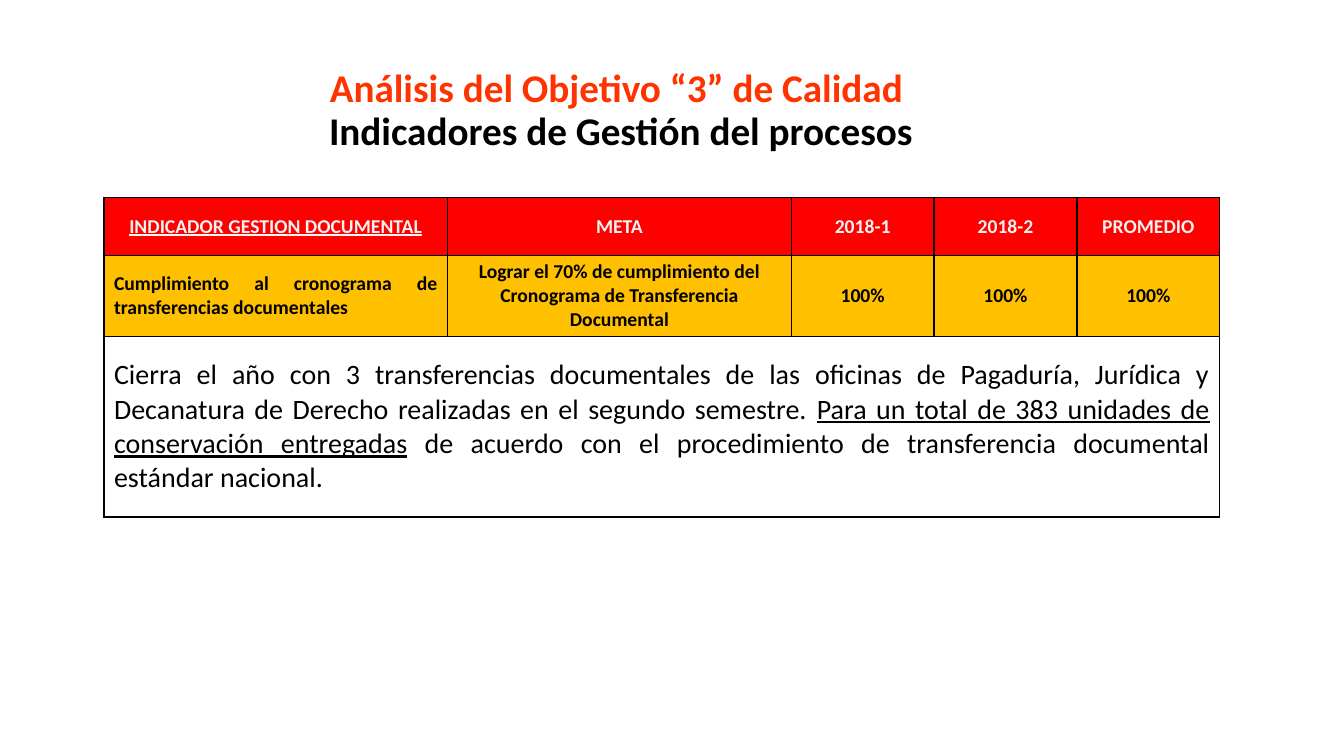
import pptx
import pptx.dml.color
import pptx.enum.text
import pptx.oxml
import pptx.oxml.ns
import pptx.util

Cm = pptx.util.Cm
Pt = pptx.util.Pt
ALIGN = pptx.enum.text.PP_ALIGN
ANCHOR = pptx.enum.text.MSO_ANCHOR

FONT = "Calibri"
COLORS = {
    "title": "FF3300",
    "text": "000000",
    "header_text": "F2F2F2",
    "header": "FF0000",
    "indicator": "FFC000",
    "border": "000000",
}

HEADERS = ["INDICADOR GESTION DOCUMENTAL", "META", "2018-1", "2018-2", "PROMEDIO"]
INDICATOR = [
    "Cumplimiento al cronograma de transferencias documentales",
    "Lograr el 70% de cumplimiento del Cronograma de Transferencia Documental",
    "100%", "100%", "100%",
]
CONCLUSION = [
    ("Cierra el año con 3 transferencias documentales de las oficinas de Pagaduría, "
     "Jurídica y Decanatura de Derecho realizadas en el segundo semestre. ", False),
    ("Para un total de 383 unidades de conservación entregadas", True),
    (" de acuerdo con el procedimiento de transferencia documental estándar nacional.", False),
]
COLUMN_WIDTHS = [8.66, 8.66, 3.6, 3.6, 3.6]
ROW_HEIGHTS = [1.45, 2.05, 4.55]


def rgb(name):
    return pptx.dml.color.RGBColor.from_string(COLORS[name])


def add_run(paragraph, text, size, color, bold=True, underline=False):
    run = paragraph.add_run()
    run.text = text
    run.font.name = FONT
    run.font.size = Pt(size)
    run.font.bold = bold
    run.font.underline = underline
    run.font.color.rgb = rgb(color)


def add_title(slide, left, top, width, height):
    box = slide.shapes.add_textbox(Cm(left), Cm(top), Cm(width), Cm(height))
    frame = box.text_frame
    frame.word_wrap = True
    frame.vertical_anchor = ANCHOR.BOTTOM
    paragraph = frame.paragraphs[0]
    paragraph.alignment = ALIGN.CENTER
    paragraph.line_spacing = 0.9
    add_run(paragraph, "Análisis del Objetivo “3” de Calidad ", 28, "title")
    paragraph.add_line_break()
    add_run(paragraph, "Indicadores de Gestión del procesos", 28, "text")


def format_cell(cell, fill, alignment):
    """Borders, fill and alignment; returns the paragraph to write in."""
    properties = cell._tc.get_or_add_tcPr()
    for side in ("lnL", "lnR", "lnT", "lnB"):
        properties.append(pptx.oxml.parse_xml(
            f'<a:{side} {pptx.oxml.ns.nsdecls("a")} w="{Pt(1)}"><a:solidFill>'
            f'<a:srgbClr val="{COLORS["border"]}"/></a:solidFill></a:{side}>'))
    if fill:
        cell.fill.solid()
        cell.fill.fore_color.rgb = rgb(fill)
    else:
        cell.fill.background()
    cell.vertical_anchor = ANCHOR.MIDDLE
    paragraph = cell.text_frame.paragraphs[0]
    paragraph.alignment = alignment
    return paragraph


def add_indicator_table(slide, left, top):
    table = slide.shapes.add_table(
        len(ROW_HEIGHTS), len(COLUMN_WIDTHS), Cm(left), Cm(top),
        Cm(sum(COLUMN_WIDTHS)), Cm(sum(ROW_HEIGHTS))).table
    table.first_row = False
    table.horz_banding = False
    for column, width in zip(table.columns, COLUMN_WIDTHS):
        column.width = Cm(width)
    for row, height in zip(table.rows, ROW_HEIGHTS):
        row.height = Cm(height)

    # Header and indicator rows; the first column is set apart
    for index, (header, value) in enumerate(zip(HEADERS, INDICATOR)):
        first = index == 0
        paragraph = format_cell(table.cell(0, index), "header", ALIGN.CENTER)
        add_run(paragraph, header, 14, "header_text", underline=first)
        paragraph = format_cell(table.cell(1, index), "indicator",
                                ALIGN.JUSTIFY if first else ALIGN.CENTER)
        add_run(paragraph, value, 14, "text")
        format_cell(table.cell(2, index), None, ALIGN.JUSTIFY)

    # Conclusion across the full width
    conclusion = table.cell(2, 0)
    conclusion.merge(table.cell(2, len(COLUMN_WIDTHS) - 1))
    for text, underline in CONCLUSION:
        add_run(conclusion.text_frame.paragraphs[0], text, 20, "text",
                bold=False, underline=underline)


def main():
    presentation = pptx.Presentation()
    presentation.slide_width = Cm(33.87)
    presentation.slide_height = Cm(19.05)
    slide = presentation.slides.add_slide(presentation.slide_layouts[6])
    add_title(slide, 2.16, 2, 26.97, 2)
    add_indicator_table(slide, 2.62, 4.98)
    presentation.save("out.pptx")


if __name__ == "__main__":
    main()
